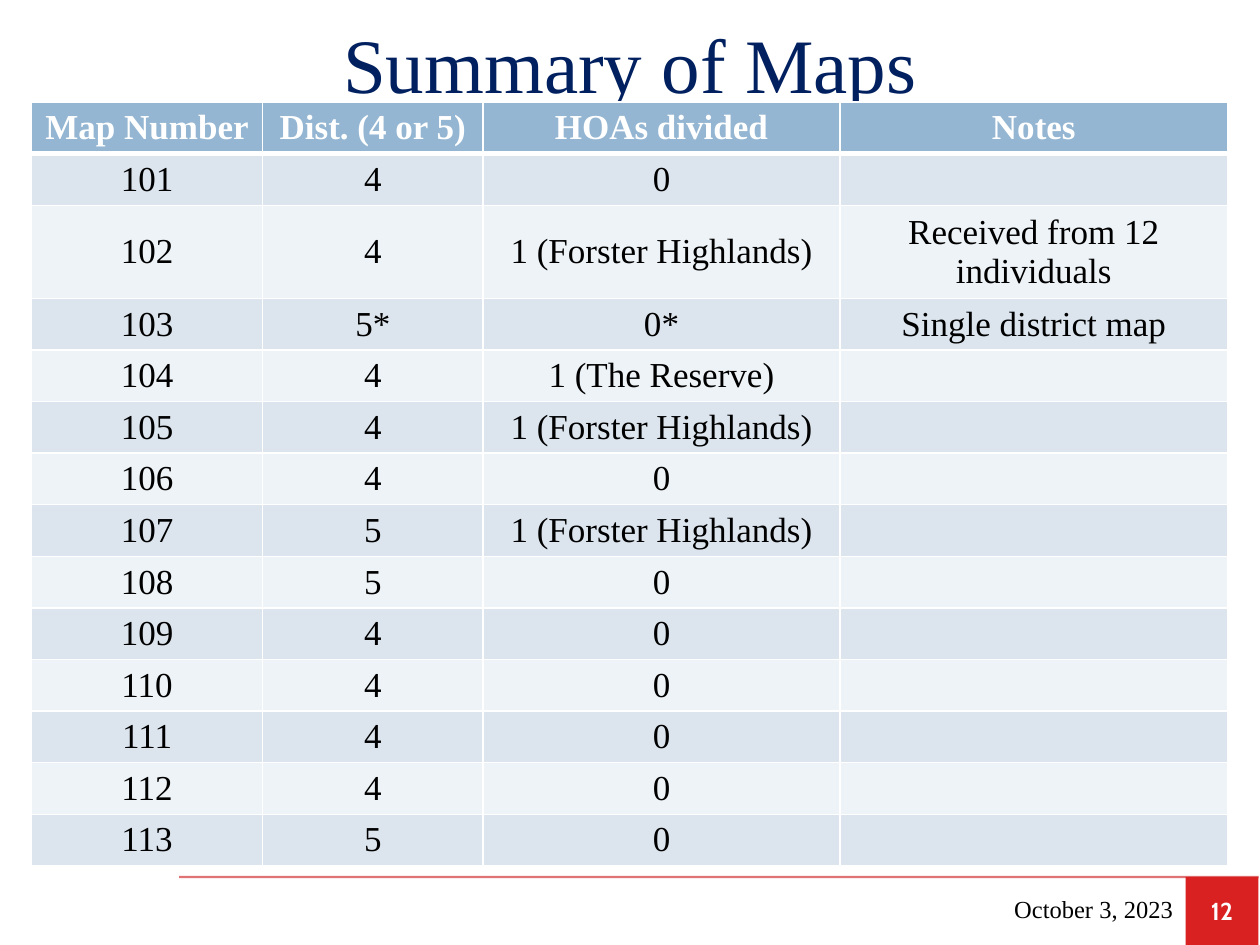
from dataclasses import dataclass

from lxml.etree import SubElement
from pptx import Presentation
from pptx.dml.color import RGBColor
from pptx.enum.shapes import MSO_CONNECTOR, MSO_SHAPE
from pptx.enum.text import MSO_ANCHOR, PP_ALIGN
from pptx.oxml.ns import qn
from pptx.util import Cm, Pt

SERIF = "Times New Roman"
HEADER_FILL = "94B6D2"
BAND_FILLS = ("DCE5EE", "EEF3F7")
WHITE, BLACK = "FFFFFF", "000000"
ROW_HEIGHT, TALL_ROW_HEIGHT = 1.04, 1.81
COLUMN_WIDTHS = (4.65, 4.45, 7.19, 7.82)
HEADERS = ("Map Number", "Dist. (4 or 5)", "HOAs divided", "Notes")


@dataclass
class MapSummary:
    number: str
    districts: str
    divided: str = "0"
    notes: str = ""


@dataclass
class TextStyle:
    size: float
    color: str
    font: str = SERIF
    bold: bool = False
    align: PP_ALIGN = PP_ALIGN.CENTER


MAPS = [
    MapSummary("101", "4"),
    MapSummary("102", "4", "1 (Forster Highlands)", "Received from 12 individuals"),
    MapSummary("103", "5*", "0*", "Single district map"),
    MapSummary("104", "4", "1 (The Reserve)"),
    MapSummary("105", "4", "1 (Forster Highlands)"),
    MapSummary("106", "4"),
    MapSummary("107", "5", "1 (Forster Highlands)"),
    MapSummary("108", "5"),
    MapSummary("109", "4"),
    MapSummary("110", "4"),
    MapSummary("111", "4"),
    MapSummary("112", "4"),
    MapSummary("113", "5"),
]


def rgb(color: str) -> RGBColor:
    return RGBColor.from_string(color)


def write_text(text_frame, text: str, style: TextStyle) -> None:
    text_frame.text = text
    paragraph = text_frame.paragraphs[0]
    paragraph.alignment = style.align
    for run in paragraph.runs:
        run.font.name = style.font
        run.font.size = Pt(style.size)
        run.font.bold = style.bold
        run.font.color.rgb = rgb(style.color)


def add_text(slide, box: tuple, text: str, style: TextStyle) -> None:
    text_frame = slide.shapes.add_textbox(*map(Cm, box)).text_frame
    text_frame.word_wrap = True
    text_frame.vertical_anchor = MSO_ANCHOR.MIDDLE
    write_text(text_frame, text, style)


def set_borders(cell, top: float, bottom: float) -> None:
    properties = cell._tc.get_or_add_tcPr()
    for side, width in (("L", 1), ("R", 1), ("T", top), ("B", bottom)):
        line = SubElement(properties, qn(f"a:ln{side}"), w=str(Pt(width)))
        fill = SubElement(line, qn("a:solidFill"))
        SubElement(fill, qn("a:srgbClr"), val=WHITE)


def format_cell(cell, text: str, row: int, column: int) -> None:
    is_header = row == 0
    set_borders(cell, top=3 if row == 1 else 1, bottom=3 if is_header else 1)
    cell.fill.solid()
    cell.fill.fore_color.rgb = rgb(HEADER_FILL if is_header else BAND_FILLS[(row - 1) % 2])
    cell.vertical_anchor = MSO_ANCHOR.MIDDLE
    narrow = column < 2
    cell.margin_left = cell.margin_right = Cm(0.08 if narrow else 0.25)
    cell.margin_top = cell.margin_bottom = Cm(0.05 if narrow else 0.09)
    write_text(cell.text_frame, text,
               TextStyle(20, WHITE if is_header else BLACK, bold=is_header))


def add_summary_table(slide) -> None:
    rows = [HEADERS] + [(m.number, m.districts, m.divided, m.notes) for m in MAPS]
    table = slide.shapes.add_table(
        len(rows), len(HEADERS), Cm(0.64), Cm(2.06),
        Cm(sum(COLUMN_WIDTHS)), Cm(ROW_HEIGHT * len(rows))).table
    for column, width in zip(table.columns, COLUMN_WIDTHS):
        column.width = Cm(width)
    for row_index, values in enumerate(rows):
        # The long note wraps onto a second line
        is_tall = len(values[-1]) > 20
        table.rows[row_index].height = Cm(TALL_ROW_HEIGHT if is_tall else ROW_HEIGHT)
        for column_index, text in enumerate(values):
            format_cell(table.cell(row_index, column_index), text, row_index, column_index)


def add_footer_rule(slide) -> None:
    rule = slide.shapes.add_connector(
        MSO_CONNECTOR.STRAIGHT, Cm(3.61), Cm(17.68), Cm(25.37), Cm(17.68))
    rule.line.width = Pt(1.25)
    rule.line.color.rgb = rgb("C80000")
    color = rule._element.spPr.find(".//" + qn("a:srgbClr"))
    SubElement(color, qn("a:alpha"), val="55000")
    SubElement(rule._element.spPr, qn("a:effectLst"))


def add_page_number(slide) -> None:
    shape = slide.shapes.add_shape(
        MSO_SHAPE.RECTANGLE, Cm(23.9), Cm(17.68), Cm(1.47), Cm(1.37))
    shape.shadow.inherit = False
    shape.fill.solid()
    shape.fill.fore_color.rgb = rgb("D92121")
    shape.line.fill.background()
    text_frame = shape.text_frame
    text_frame.margin_left = text_frame.margin_right = 0
    text_frame.vertical_anchor = MSO_ANCHOR.MIDDLE
    write_text(text_frame, "12", TextStyle(14, WHITE, font="Cabin", bold=True))


def main() -> None:
    presentation = Presentation()
    presentation.slide_width, presentation.slide_height = Cm(25.4), Cm(19.05)
    slide = presentation.slides.add_slide(presentation.slide_layouts[6])

    # Footer rule and page number
    add_footer_rule(slide)
    add_page_number(slide)

    # Title, with the table over its lower edge
    add_text(slide, (0, 0, 25.4, 2.54), "Summary of Maps", TextStyle(44, "002060"))
    add_summary_table(slide)

    # Date
    add_text(slide, (16.48, 17.81, 7.42, 1.02), "October 3, 2023",
             TextStyle(14, BLACK, align=PP_ALIGN.RIGHT))

    presentation.save("out.pptx")


if __name__ == "__main__":
    main()
